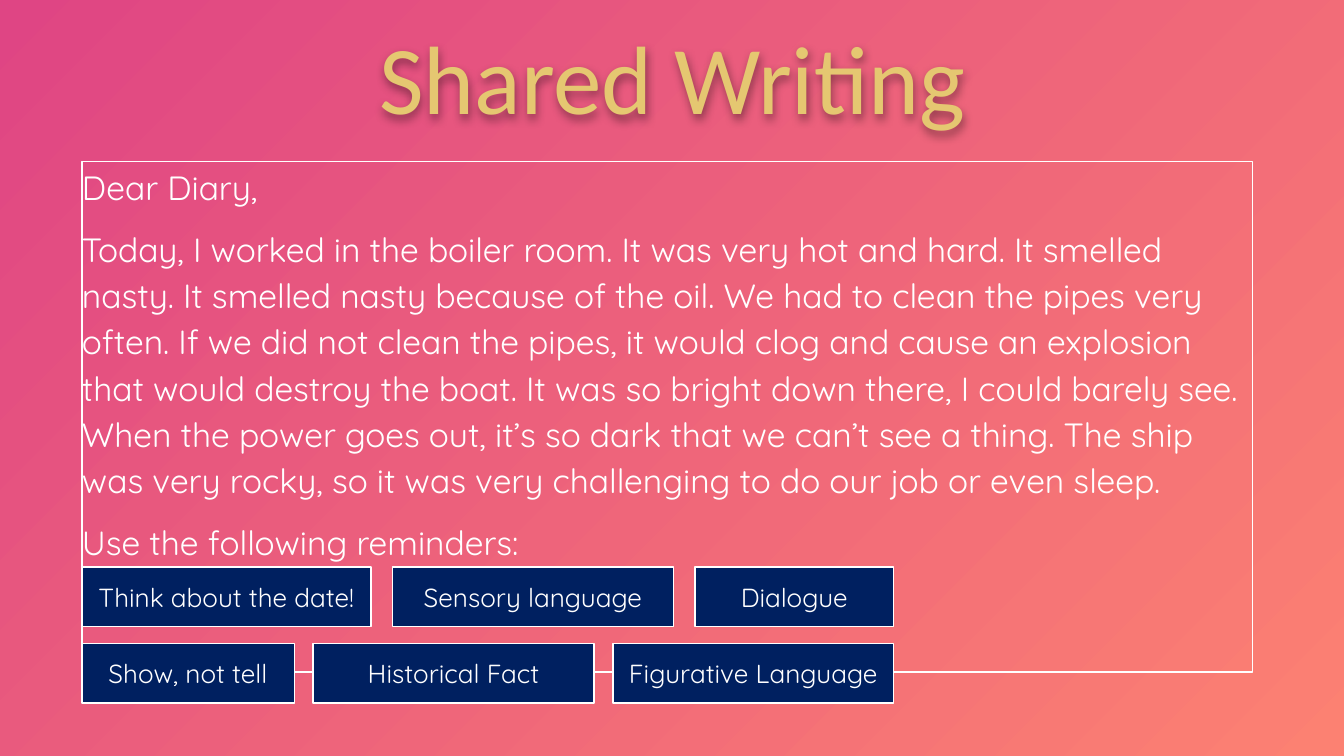
from lxml import etree
from pptx import Presentation
from pptx.dml.color import RGBColor
from pptx.enum.shapes import MSO_SHAPE
from pptx.enum.text import MSO_ANCHOR, MSO_AUTO_SIZE, PP_ALIGN
from pptx.oxml import parse_xml
from pptx.oxml.ns import nsdecls, qn
from pptx.util import Inches, Pt

RECTANGLE = MSO_SHAPE.RECTANGLE
TOP, MIDDLE, BOTTOM = MSO_ANCHOR.TOP, MSO_ANCHOR.MIDDLE, MSO_ANCHOR.BOTTOM
LEFT, CENTER = PP_ALIGN.LEFT, PP_ALIGN.CENTER
NO_AUTOFIT = MSO_AUTO_SIZE.NONE

CORAL = RGBColor(0xFC, 0x81, 0x72)
PINK = RGBColor(0xDF, 0x45, 0x84)
GOLD = RGBColor(0xE5, 0xC7, 0x71)
NAVY = RGBColor(0x00, 0x20, 0x60)
WHITE = RGBColor(0xFF, 0xFF, 0xFF)

DIARY = [
    "Dear Diary,",
    "Today, I worked in the boiler room. It was very hot and hard. It smelled nasty. "
    "It smelled nasty because of the oil. We had to clean the pipes very often. "
    "If we did not clean the pipes, it would clog and cause an explosion that would "
    "destroy the boat. It was so bright down there, I could barely see. When the power "
    "goes out, it’s so dark that we can’t see a thing. The ship was very rocky, so it "
    "was very challenging to do our job or even sleep.",
    "Use the following reminders:",
]
REMINDER_ROWS = [
    [("Think about the date!", 2.15), ("Sensory language", 2.09), ("Dialogue", 1.48)],
    [("Show, not tell", 1.58), ("Historical Fact", 2.09), ("Figurative Language", 2.09)],
]


def write_text(shape, paragraphs, size, font="Quicksand", color=WHITE, align=LEFT,
               anchor=TOP, spacing=1.0, gap=0, inset=0):
    frame = shape.text_frame
    frame.word_wrap = True
    frame.auto_size = NO_AUTOFIT
    frame.vertical_anchor = anchor
    frame.margin_left = frame.margin_right = Inches(inset)
    frame.margin_top = frame.margin_bottom = Inches(inset)
    for index, text in enumerate(paragraphs):
        paragraph = frame.add_paragraph() if index else frame.paragraphs[0]
        paragraph.alignment = align
        paragraph.line_spacing = spacing
        paragraph.space_before = Pt(gap if index else 0)
        run = paragraph.add_run()
        run.text = text
        run.font.name = font
        run.font.size = Pt(size)
        run.font.color.rgb = color


def add_box(slide, left, top, width, height, fill=None):
    """Add a white-outlined rectangle, hollow unless a fill is given."""
    box = slide.shapes.add_shape(RECTANGLE, Inches(left), Inches(top),
                                 Inches(width), Inches(height))
    box.shadow.inherit = False
    if fill is None:
        box.fill.background()
    else:
        box.fill.solid()
        box.fill.fore_color.rgb = fill
    box.line.color.rgb = WHITE
    box.line.width = Pt(0.75)
    return box


def paint_background(slide):
    """Spread a gradient from the bottom right corner to the top left."""
    fill = slide.background.fill
    fill.gradient()
    for stop, color, position in zip(fill.gradient_stops, (CORAL, PINK), (0, 1)):
        stop.color.rgb = color
        stop.position = position
    gradient = slide.background._cSld.find(".//" + qn("a:gradFill"))
    gradient.remove(gradient.find(qn("a:lin")))
    corner = etree.SubElement(gradient, qn("a:path"), {"path": "circle"})
    etree.SubElement(corner, qn("a:fillToRect"), l="100000", t="100000")


def add_title(slide, left, top, width, height):
    title = slide.shapes.title
    title.left, title.top = Inches(left), Inches(top)
    title.width, title.height = Inches(width), Inches(height)
    write_text(title, ["Shared Writing"], 52, font="Calibri", color=GOLD,
               align=CENTER, anchor=BOTTOM, spacing=0.9)
    title._element.spPr.append(parse_xml(
        f'<a:effectLst {nsdecls("a")}>'
        '<a:outerShdw blurRad="63500" dist="25400" dir="5400000" algn="t" rotWithShape="0">'
        '<a:srgbClr val="000000"><a:alpha val="40000"/></a:srgbClr>'
        '</a:outerShdw></a:effectLst>'))


def add_diary(slide, left, top, width, height):
    box = add_box(slide, left, top, width, height)
    write_text(box, DIARY, 18, spacing=1.15, gap=8)


def add_reminders(slide, left, top, width, height):
    """Fill the width with each row of labels, leaving equal gaps."""
    label_height = 0.44
    pitch = (height - label_height) / (len(REMINDER_ROWS) - 1)
    for index, row in enumerate(REMINDER_ROWS):
        gap = (width - sum(label_width for _, label_width in row)) / (len(row) - 1)
        x = left
        for text, label_width in row:
            label = add_box(slide, x, top + index * pitch, label_width, label_height, NAVY)
            write_text(label, [text], 14, align=CENTER, anchor=MIDDLE, inset=0.1)
            x += label_width + gap


def main():
    presentation = Presentation()
    presentation.slide_width = Inches(10)
    presentation.slide_height = Inches(10 * 9 / 16)
    title_only = presentation.slide_layouts[5]
    slide = presentation.slides.add_slide(title_only)
    paint_background(slide)
    add_title(slide, 1.07, 0.22, 7.86, 0.79)
    add_diary(slide, 0.61, 1.2, 8.71, 3.8)
    add_reminders(slide, 0.61, 4.22, 6.04, 1.01)
    presentation.save("out.pptx")


if __name__ == "__main__":
    main()
